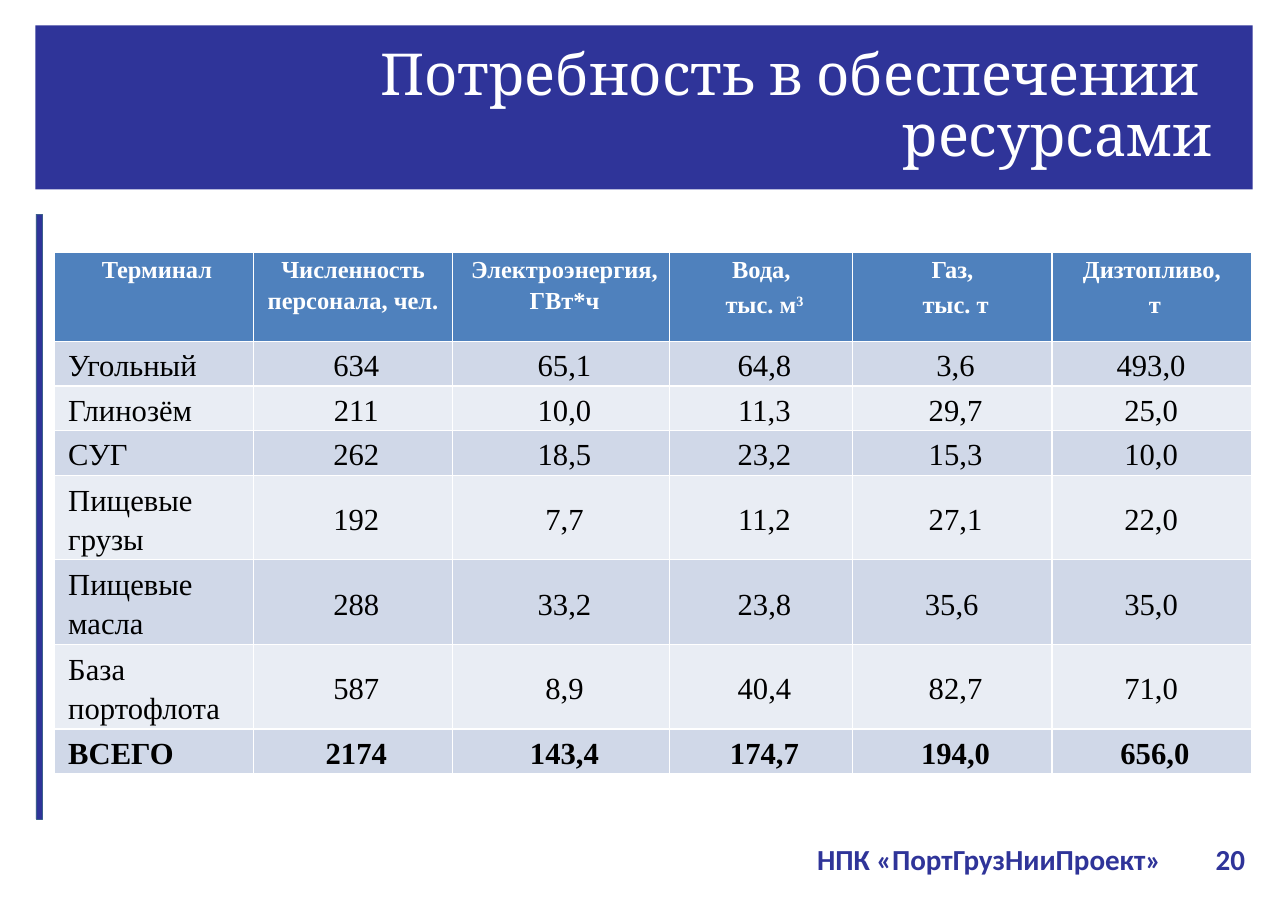
from dataclasses import dataclass

from lxml.etree import SubElement
from pptx import Presentation
from pptx.dml.color import RGBColor
from pptx.enum.shapes import MSO_SHAPE
from pptx.enum.text import MSO_ANCHOR, PP_ALIGN
from pptx.oxml.ns import qn
from pptx.util import Inches, Pt


@dataclass(frozen=True)
class Theme:
    navy: RGBColor = RGBColor.from_string("2F3499")
    bar_line: RGBColor = RGBColor.from_string("3A5F8C")
    header: RGBColor = RGBColor.from_string("4F81BD")
    odd_row: RGBColor = RGBColor.from_string("D0D8E8")
    even_row: RGBColor = RGBColor.from_string("E9EDF4")
    white: RGBColor = RGBColor.from_string("FFFFFF")
    black: RGBColor = RGBColor.from_string("000000")
    title_size: float = 37.8
    header_size: float = 16
    body_size: float = 20
    footer_size: float = 19


theme = Theme()
presentation = Presentation()
presentation.slide_width = Inches(11.69)
presentation.slide_height = Inches(8.27)
slide = presentation.slides.add_slide(presentation.slide_layouts[6])


def share(*percents):
    """Turn percents of the slide, across and down in turn, into lengths."""
    sides = (presentation.slide_width, presentation.slide_height)
    return [int(sides[i % 2] * percent / 100) for i, percent in enumerate(percents)]


def set_font(paragraph, name, size, color, bold=False):
    font = paragraph.font
    font.name, font.size, font.bold = name, Pt(size), bold
    font.color.rgb = color


# Title band and side bar
band = slide.shapes.add_shape(MSO_SHAPE.RECTANGLE, *share(2.74, 2.78, 94.53, 18.02))
bar = slide.shapes.add_shape(MSO_SHAPE.RECTANGLE, *share(2.78, 23.52, 0.51, 66.38))
for shape in (band, bar):
    shape.shadow.inherit = False
    shape.fill.solid()
    shape.fill.fore_color.rgb = theme.navy
band.line.fill.background()
bar.line.color.rgb = theme.bar_line
bar.line.width = Pt(0.25)

# Title and footer
title = slide.shapes.add_textbox(*share(5.05, 4.78, 89.99, 14.03))
footer = slide.shapes.add_textbox(*share(56.2, 91.66, 41.49, 5.32))
for box in (title, footer):
    frame = box.text_frame
    frame.word_wrap = True
    frame.vertical_anchor = MSO_ANCHOR.MIDDLE
    frame.margin_left = frame.margin_right = Inches(0.11)
    frame.margin_top = frame.margin_bottom = Inches(0.06)

paragraph = title.text_frame.paragraphs[0]
paragraph.text = "Потребность в обеспечении \vресурсами"
paragraph.alignment = PP_ALIGN.RIGHT
paragraph.line_spacing = 0.88
set_font(paragraph, "Cambria", theme.title_size, theme.white)

paragraph = footer.text_frame.paragraphs[0]
paragraph.text = "\tНПК «ПортГрузНииПроект»\t20"
tabs = SubElement(paragraph._p.get_or_add_pPr(), qn("a:tabLst"))
for stop in (33.02, 39.52):
    SubElement(tabs, qn("a:tab"), pos=str(share(stop)[0]), algn="r")
set_font(paragraph, "Calibri", theme.footer_size, theme.navy, bold=True)

# Resource table
headings = ["Терминал", "Численность персонала, чел.", "Электроэнергия, ГВт*ч",
            "Вода, \nтыс. м", "Газ, \nтыс. т", "Дизтопливо, \nт"]
terminals = [
    ["Угольный", "634", "65,1", "64,8", "3,6", "493,0 "],
    ["Глинозём", "211", "10,0", "11,3", "29,7", "25,0 "],
    ["СУГ", "262", "18,5", "23,2", "15,3", "10,0 "],
    ["Пищевые грузы", "192", "7,7", "11,2", "27,1", "22,0 "],
    ["Пищевые масла", "288", "33,2", "23,8", "35,6 ", "35,0 "],
    ["База портофлота", "587", "8,9", "40,4", "82,7", "71,0 "],
]
total = ["ВСЕГО", "2174", "143,4", "174,7", "194,0", "656,0"]
rows = [headings, *terminals, total]
column_shares = [15.48, 15.48, 16.85, 14.2, 15.48, 15.48]
row_shares = [9.79] + [4.9] * 3 + [8.56] * 3 + [4.9]

table = slide.shapes.add_table(
    len(rows), len(headings),
    *share(4.19, 27.69, sum(column_shares), sum(row_shares))).table
for column, width in zip(table.columns, column_shares):
    column.width = share(width)[0]
for row, height in zip(table.rows, row_shares):
    row.height = share(0, height)[1]

for r, texts in enumerate(rows):
    is_header = r == 0
    for c, text in enumerate(texts):
        cell = table.cell(r, c)
        cell.fill.solid()
        cell.fill.fore_color.rgb = (
            theme.header if is_header else theme.odd_row if r % 2 else theme.even_row)
        cell.margin_left = cell.margin_right = Inches(0.07)
        cell.margin_top = cell.margin_bottom = 0
        cell.vertical_anchor = MSO_ANCHOR.TOP if is_header else MSO_ANCHOR.MIDDLE
        cell.text = text
        for p, paragraph in enumerate(cell.text_frame.paragraphs):
            centred = is_header or c > 0
            paragraph.alignment = PP_ALIGN.CENTER if centred else PP_ALIGN.LEFT
            paragraph.line_spacing = 1.15
            if p > 0:
                paragraph.space_before = Pt(2.9)
            if (r, c) != (0, 1):
                paragraph._p.get_or_add_pPr().set("marL", str(Inches(0.06)))
            set_font(paragraph, "Times New Roman",
                     theme.header_size if is_header else theme.body_size,
                     theme.white if is_header else theme.black,
                     bold=is_header or texts is total)

cubic = table.cell(0, 3).text_frame.paragraphs[1].add_run()
cubic.text = "3"
cubic.font._element.set("baseline", "30000")

presentation.save("out.pptx")
